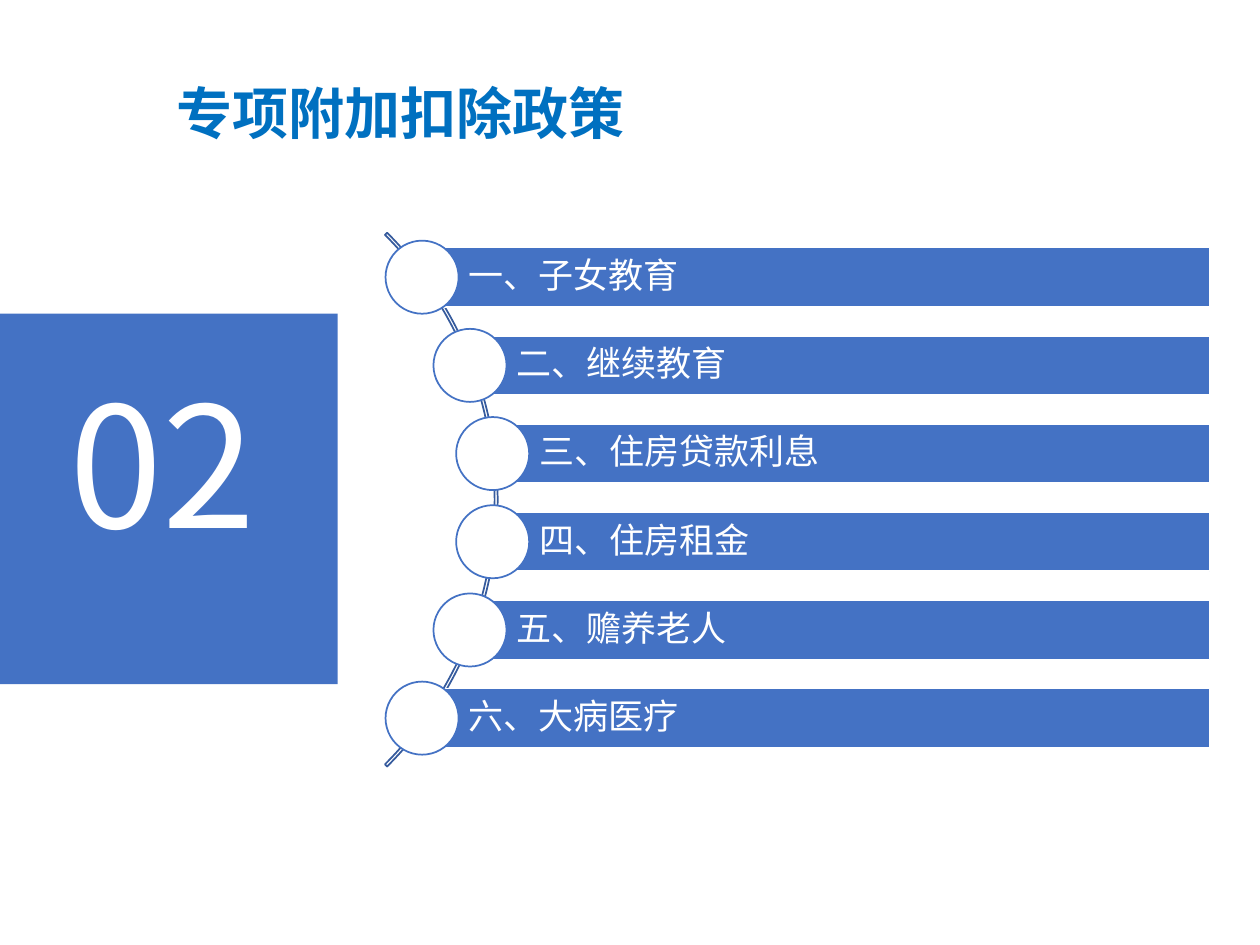
from pptx import Presentation
from pptx.dml.color import RGBColor
from pptx.enum.shapes import MSO_SHAPE as Shape
from pptx.enum.text import MSO_ANCHOR as Anchor, MSO_AUTO_SIZE as AutoSize, PP_ALIGN as Align
from pptx.oxml.ns import qn
from pptx.util import Inches, Pt

COLORS = {"blue": "4472C4", "arc": "365B9D", "title": "0070C0", "white": "FFFFFF"}
CJK_FONT = "Noto Sans CJK SC"
BODY_FONT = "Calibri"

TOPICS = ["一、子女教育", "二、继续教育", "三、住房贷款利息",
          "四、住房租金", "五、赡养老人", "六、大病医疗"]
BAR_LEFTS = [3.35, 3.73, 3.91, 3.91, 3.73, 3.35]
BAR_RIGHT, BAR_HEIGHT = 9.6, 0.47
FIRST_CENTER, PITCH = 2.2, 0.7
CIRCLE = 0.58


def color(name):
    return RGBColor.from_string(COLORS[name])


def add_shape(page, kind, left, top, width, height, fill=None, line=None):
    shape = page.shapes.add_shape(
        kind, Inches(left), Inches(top), Inches(width), Inches(height))
    shape.shadow.inherit = False
    if fill:
        shape.fill.solid()
        shape.fill.fore_color.rgb = color(fill)
    else:
        shape.fill.background()
    if line:
        shape.line.color.rgb = color(line)
        shape.line.width = Pt(1)
    else:
        shape.line.fill.background()
    return shape


def add_span(para, text, size, font, tint, bold=False):
    span = para.add_run()
    span.text = text
    span.font.size = Pt(size)
    span.font.bold = bold
    span.font.color.rgb = color(tint)
    span.font.name = font
    if font == CJK_FONT:
        east_asian = span.font._element.makeelement(qn("a:ea"), {"typeface": font})
        span.font._element.find(qn("a:latin")).addnext(east_asian)


def add_title(page, text):
    title = page.shapes.title
    title.left, title.top = Inches(1.3), Inches(0.45)
    title.width, title.height = Inches(7.84), Inches(0.61)
    frame = title.text_frame
    frame.auto_size = AutoSize.NONE
    frame.vertical_anchor = Anchor.MIDDLE
    para = frame.paragraphs[0]
    para.alignment = Align.LEFT
    para.line_spacing = 1.5
    add_span(para, text, 32, CJK_FONT, "title", bold=True)


def add_section_number(page, text):
    add_shape(page, Shape.RECTANGLE, 0, 2.49, 2.68, 2.94, "blue")
    box = page.shapes.add_textbox(Inches(0.45), Inches(2.81), Inches(1.78), Inches(1.72))
    box.text_frame.word_wrap = False
    box.text_frame.auto_size = AutoSize.SHAPE_TO_FIT_TEXT
    add_span(box.text_frame.paragraphs[0], text, 96, CJK_FONT, "white")


def add_arc(page):
    arc = add_shape(page, Shape.BLOCK_ARC, -2.04, 0.97, 5.99, 5.99, line="arc")
    # Angles count in 60000ths of a degree, scaled by 100000: 315 to 45 degrees.
    for index, value in enumerate((189, 27, 0.004)):
        arc.adjustments[index] = value


def add_topic(page, text, left, center):
    """A labelled bar with a circle centred on its left end."""
    bar = add_shape(page, Shape.RECTANGLE, left, center - BAR_HEIGHT / 2,
                    BAR_RIGHT - left, BAR_HEIGHT, "blue", "white")
    frame = bar.text_frame
    frame.word_wrap = True
    frame.vertical_anchor = Anchor.MIDDLE
    frame.margin_left = Inches(0.37)
    frame.margin_top = frame.margin_right = frame.margin_bottom = Inches(0.06)
    para = frame.paragraphs[0]
    para.alignment = Align.LEFT
    para.line_spacing = 0.9
    add_span(para, text, 20, BODY_FONT, "white")
    add_shape(page, Shape.OVAL, left - CIRCLE / 2, center - CIRCLE / 2,
              CIRCLE, CIRCLE, "white", "blue")


def main():
    deck = Presentation()
    deck.slide_width, deck.slide_height = Inches(10), Inches(7.5)
    page = deck.slides.add_slide(deck.slide_layouts[5])
    add_title(page, "专项附加扣除政策")
    add_section_number(page, "02")
    add_arc(page)
    for index, (text, left) in enumerate(zip(TOPICS, BAR_LEFTS)):
        add_topic(page, text, left, FIRST_CENTER + index * PITCH)
    deck.save("out.pptx")


if __name__ == "__main__":
    main()
